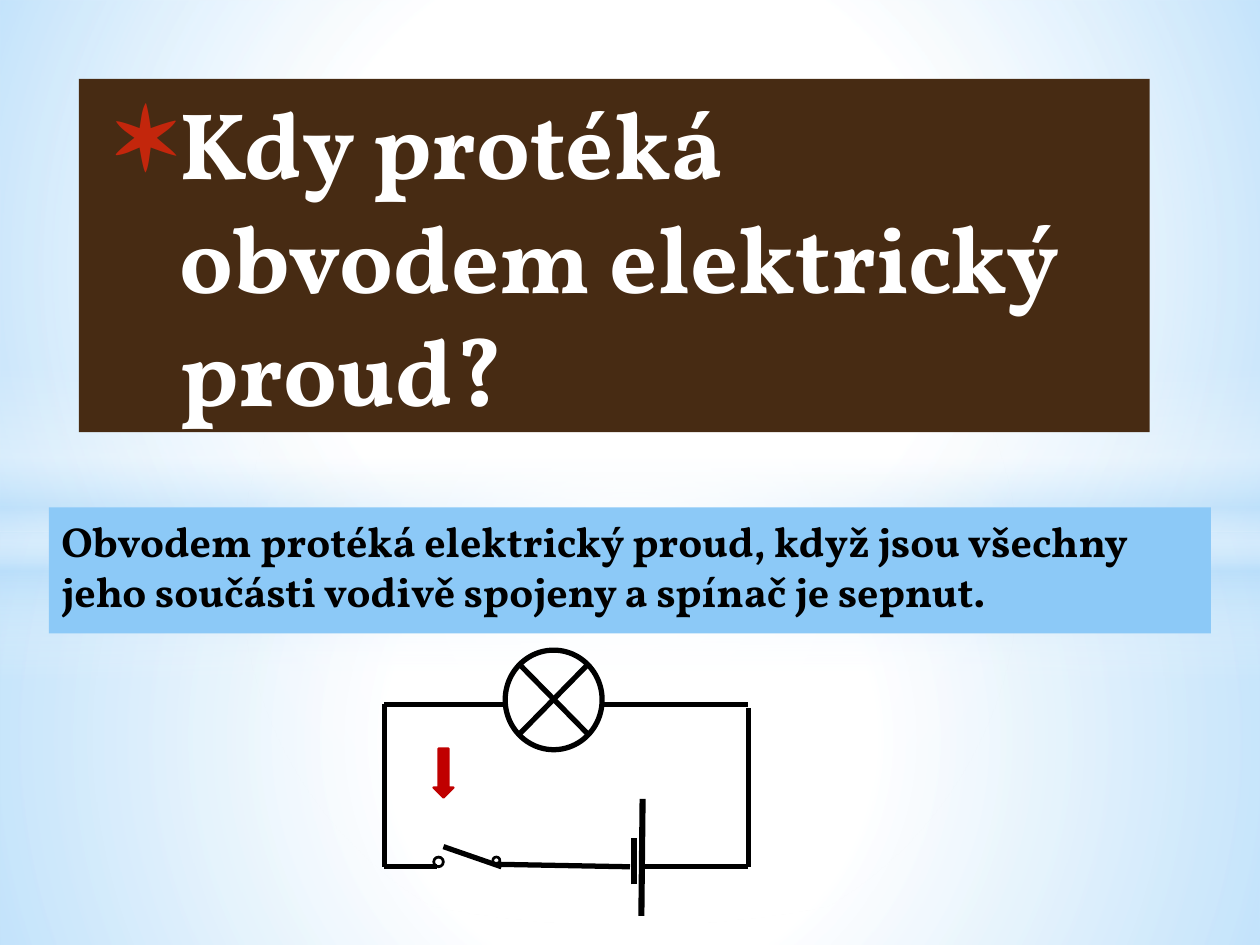
from lxml import etree
from pptx import Presentation
from pptx.dml.color import RGBColor
from pptx.enum.shapes import MSO_CONNECTOR, MSO_SHAPE
from pptx.enum.text import MSO_ANCHOR, MSO_AUTO_SIZE, PP_ALIGN
from pptx.oxml import parse_xml
from pptx.oxml.ns import nsdecls, qn
from pptx.util import Pt

RECTANGLE, OVAL = MSO_SHAPE.RECTANGLE, MSO_SHAPE.OVAL
DONUT, DOWN_ARROW = MSO_SHAPE.DONUT, MSO_SHAPE.DOWN_ARROW
STRAIGHT = MSO_CONNECTOR.STRAIGHT
TOP, MIDDLE = MSO_ANCHOR.TOP, MSO_ANCHOR.MIDDLE
LEFT = PP_ALIGN.LEFT
NO_AUTOFIT = MSO_AUTO_SIZE.NONE

FONT = "Vollkorn"
COLORS = {
    "white": "FFFFFF", "sky": "B4DCFA", "panel": "8CC9F7", "brown": "472B13",
    "bullet": "C3260C", "black": "000000", "red": "C00000",
}
RADIAL = ('<a:path path="circle"><a:fillToRect l="50000" t="50000" '
          'r="50000" b="50000"/></a:path>')
VERTICAL = '<a:lin ang="5400000" scaled="0"/>'


def color(name):
    return RGBColor.from_string(COLORS[name])


def add_shape(shapes, kind, box, fill=None, line=None, width=1.25):
    shape = shapes.add_shape(kind, *(Pt(value) for value in box))
    shape.shadow.inherit = False
    if fill:
        shape.fill.solid()
        shape.fill.fore_color.rgb = color(fill)
    else:
        shape.fill.background()
    if line:
        shape.line.color.rgb = color(line)
        shape.line.width = Pt(width)
    else:
        shape.line.fill.background()
    return shape


def add_wire(shapes, origin, points, width=3):
    left, top = origin
    x1, y1, x2, y2 = points
    wire = shapes.add_connector(STRAIGHT, Pt(left + x1), Pt(top + y1),
                                Pt(left + x2), Pt(top + y2))
    wire.line.color.rgb = color("black")
    wire.line.width = Pt(width)
    etree.SubElement(wire._element.spPr, qn("a:effectLst"))


def add_glow(slide, kind, box, stops, direction):
    """Add a gradient shape; stops are (position %, colour, opacity %)."""
    shape = add_shape(slide.shapes, kind, box)
    stop_xml = "".join(
        f'<a:gs pos="{position * 1000}"><a:srgbClr val="{COLORS[name]}">'
        f'<a:alpha val="{opacity * 1000}"/></a:srgbClr></a:gs>'
        for position, name, opacity in stops)
    gradient = parse_xml(
        f'<a:gradFill {nsdecls("a")} rotWithShape="1">'
        f'<a:gsLst>{stop_xml}</a:gsLst>{direction}</a:gradFill>')
    properties = shape._element.spPr
    properties.replace(properties.find(qn("a:noFill")), gradient)


def add_backdrop(slide, width, height):
    horizon = 304.5
    add_glow(slide, RECTANGLE, (0, horizon, width, height - horizon),
             [(0, "white", 91), (37, "white", 76), (100, "sky", 79)], RADIAL)
    add_glow(slide, RECTANGLE, (0, 0, width, horizon),
             [(0, "white", 89), (48, "white", 62), (100, "sky", 79)], RADIAL)
    add_glow(slide, RECTANGLE, (0, 209, width, 180),
             [(0, "white", 0), (29, "white", 30), (45, "sky", 40),
              (55, "white", 26), (65, "sky", 60), (100, "white", 0)], VERTICAL)
    add_glow(slide, OVAL, (0, 126, width, 402),
             [(0, "white", 100), (54, "white", 0)], RADIAL)


def fill_text_panel(shape, text, fill, size, text_color, anchor):
    shape.fill.solid()
    shape.fill.fore_color.rgb = color(fill)
    frame = shape.text_frame
    frame.text = text
    frame.word_wrap = True
    frame.auto_size = NO_AUTOFIT
    frame.vertical_anchor = anchor
    paragraph = frame.paragraphs[0]
    paragraph.alignment = LEFT
    font = paragraph.runs[0].font
    font.name, font.size, font.bold = FONT, Pt(size), True
    font.color.rgb = color(text_color)
    return paragraph


def place_title(slide, box, text):
    title = slide.shapes.title
    slide.shapes._spTree.append(title._element)  # in front of the backdrop
    title.left, title.top, title.width, title.height = (Pt(v) for v in box)
    paragraph = fill_text_panel(title, text, "brown", 54, "white", MIDDLE)
    properties = paragraph._p.get_or_add_pPr()
    properties.set("marL", str(Pt(50.4)))
    properties.set("indent", str(Pt(-36)))
    for bullet_part in (
            f'<a:buClr {nsdecls("a")}><a:srgbClr val="{COLORS["bullet"]}"/></a:buClr>',
            f'<a:buSzPct {nsdecls("a")} val="128000"/>',
            f'<a:buFont {nsdecls("a")} typeface="Symbol" pitchFamily="18" charset="2"/>',
            f'<a:buChar {nsdecls("a")} char="*"/>'):
        properties.append(parse_xml(bullet_part))


def add_answer(slide, box, text):
    panel = slide.shapes.add_textbox(*(Pt(value) for value in box))
    fill_text_panel(panel, text, "panel", 24, "black", TOP)
    panel.text_frame.margin_top = Pt(4.6)


def add_lamp(slide, left, top):
    lamp = slide.shapes.add_group_shape().shapes
    add_shape(lamp, OVAL, (left, top, 55.4, 56.9), line="black", width=3)
    near, far, upper, lower = 7.9, 47.5, 7.9, 48.2
    add_wire(lamp, (left, top), (far, upper, near, lower))
    add_wire(lamp, (left, top), (near, upper, far, lower))


def add_terminal(slide, left, top, size, fill=None):
    ring = add_shape(slide.shapes, DONUT, (left, top, size, size), fill, "black")
    ring.adjustments[0] = 0.055


def add_circuit(slide, left, top):
    """Draw the lamp, switch and cell in a loop from the given corner."""
    origin = (left, top)
    right, upper, lower = 208.1, 31, 123.8
    add_terminal(slide, left + 61.9, top + 118.1, 4.3)
    wires = [
        (33.8, 112.3, 67, lower),         # switch arm
        (146.2, lower, right, lower),
        (30.2, lower, 0, lower),
        (140.4, lower, 64.1, 122.4),
        (125.3, upper, right, upper),
        (0, upper, 69.1, upper),
        (0, lower, 0, upper),
        (right, lower, right, 33.1),
    ]
    cell_plates = [(146.9, 151.9, 147.6, 85), (142.6, 133.9, 142.6, 107.3)]
    for points in wires:
        add_wire(slide.shapes, origin, points)
    for points in cell_plates:
        add_wire(slide.shapes, origin, points, 3.5)
    add_lamp(slide, left + 69.1, top)
    add_shape(slide.shapes, DOWN_ARROW, (left + 28.1, top + 56.2, 11.5, 28.1),
              "red", "red")
    add_terminal(slide, left + 28.1, top + 118.1, 5.8, "black")


def main():
    presentation = Presentation()
    presentation.slide_width, presentation.slide_height = Pt(720), Pt(540)
    slide = presentation.slides.add_slide(presentation.slide_layouts[5])
    add_backdrop(slide, 720, 540)
    add_answer(slide, (28, 290, 664, 72),
               "Obvodem protéká elektrický proud, když jsou všechny "
               "jeho součásti vodivě spojeny a spínač je sepnut.")
    place_title(slide, (45, 45, 612, 202), "Kdy protéká obvodem elektrický proud?")
    add_circuit(slide, 219.6, 371.5)
    presentation.save("out.pptx")


if __name__ == "__main__":
    main()
